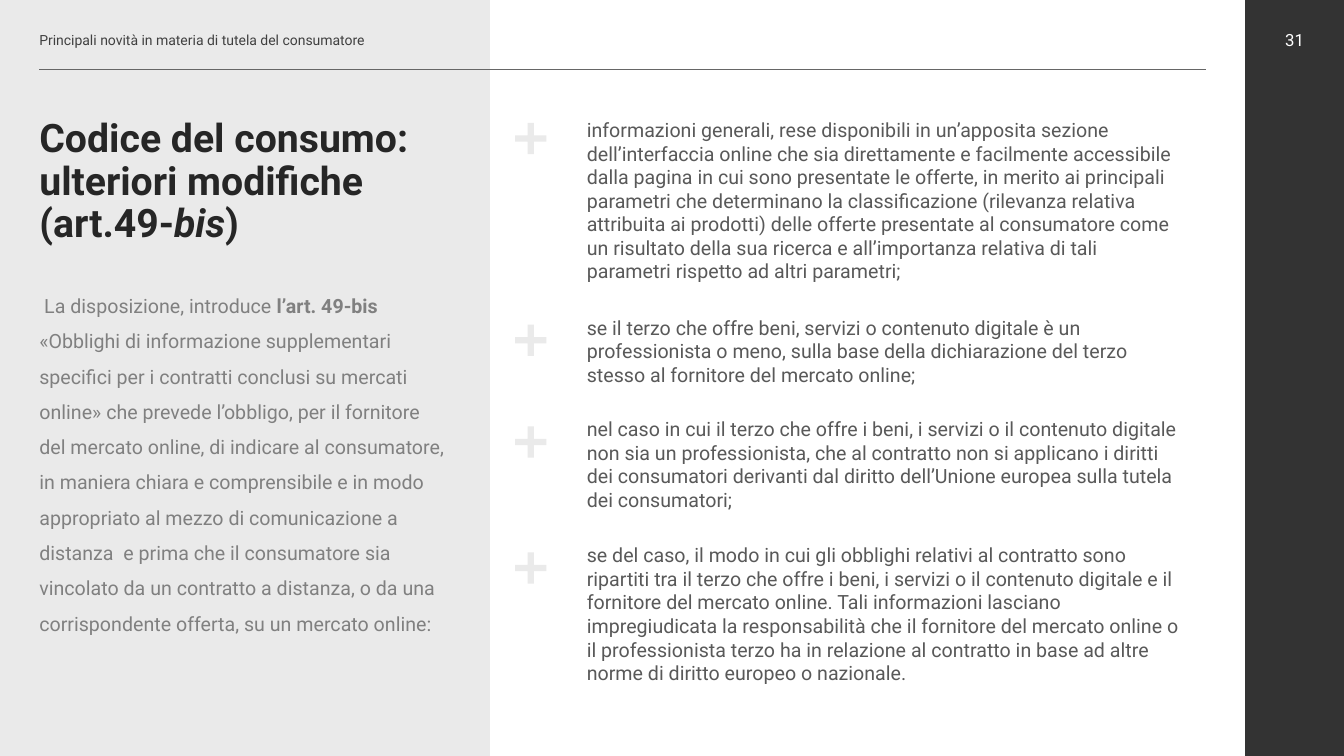
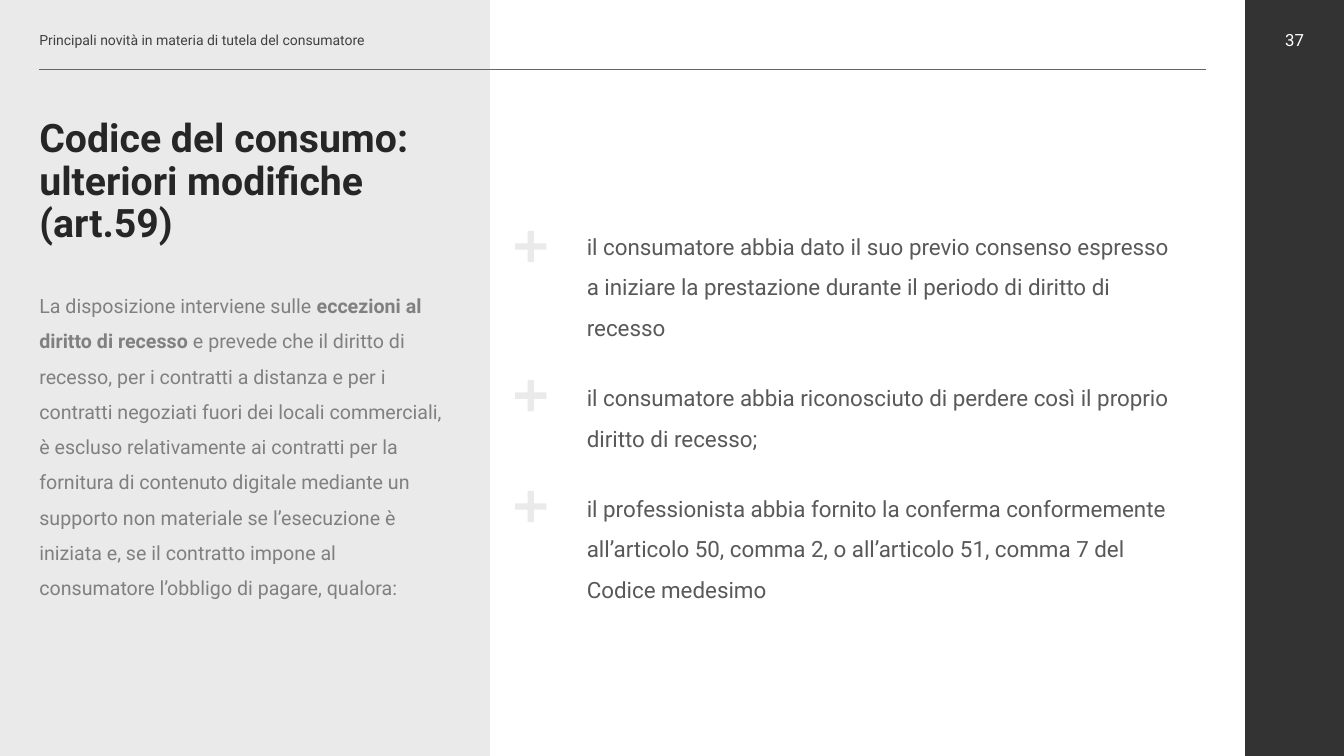
"""Build two slides on the changes to the Italian consumer code."""
from dataclasses import dataclass

from lxml import etree
from pptx import Presentation
from pptx import util as u
from pptx.dml.color import RGBColor
from pptx.enum import shapes, text
from pptx.oxml import ns

FONT = "Roboto"
COLORS = {
    "dark": "333333",
    "panel": "EAEAEA",
    "rule": "666666",
    "header": "404040",
    "title": "262626",
    "intro": "808080",
    "point": "595959",
    "white": "FFFFFF",
}
HEADER = "Principali novità in materia di tutela del consumatore"
MARGIN = 0.39
PANEL_WIDTH = 4.86
BAND_LEFT, BAND_WIDTH = 12.35, 0.98
SLIDE_WIDTH, SLIDE_HEIGHT = 13.33, 7.5
HEADER_TOP, HEADER_HEIGHT = 0.2, 0.39
MARK_LEFT, MARK_SIZE = 5.11, 0.31
POINT_LEFT, POINT_WIDTH = 5.43, 6.71


@dataclass(frozen=True)
class Span:
    text: str
    bold: bool = False
    italic: bool = False


@dataclass(frozen=True)
class Style:
    size: float
    color: str
    spacing: float = 1.0
    align: text.PP_ALIGN = text.PP_ALIGN.LEFT


@dataclass(frozen=True)
class Point:
    height: float
    text: str
    mark_offset: float = 0.09


@dataclass(frozen=True)
class Page:
    number: str
    title: list[Span]
    intro: list[Span]
    intro_height: float
    points: list[Point]
    points_top: float
    overlap: float
    point_style: Style


TITLE_STYLE = Style(28, "title", 0.9)
INTRO_STYLE = Style(14, "intro", 1.5)
HEADER_STYLE = Style(10, "header")
NUMBER_STYLE = Style(12, "white", align=text.PP_ALIGN.CENTER)

PAGES = [
    Page(
        number="31",
        title=[
            Span("Codice del consumo: ulteriori modifiche (art.49-", bold=True),
            Span("bis", bold=True, italic=True),
            Span(")", bold=True),
        ],
        intro=[
            Span(" La disposizione, introduce "),
            Span("l’art. 49-bis ", bold=True),
            Span(
                "«Obblighi di informazione supplementari specifici per i contratti "
                "conclusi su mercati online» che prevede l’obbligo, per il fornitore "
                "del mercato online, di indicare al consumatore, in maniera chiara e "
                "comprensibile e in modo appropriato al mezzo di comunicazione a "
                "distanza  e prima che il consumatore sia vincolato da un contratto a "
                "distanza, o da una corrispondente offerta, su un mercato online:"
            ),
        ],
        intro_height=3.53,
        points=[
            Point(
                2.05,
                "informazioni generali, rese disponibili in un’apposita sezione "
                "dell’interfaccia online che sia direttamente e facilmente accessibile "
                "dalla pagina in cui sono presentate le offerte, in merito ai "
                "principali parametri che determinano la classificazione (rilevanza "
                "relativa attribuita ai prodotti) delle offerte presentate al "
                "consumatore come un risultato della sua ricerca e all’importanza "
                "relativa di tali parametri rispetto ad altri parametri;",
                mark_offset=0.05,
            ),
            Point(
                1.1,
                "se il terzo che offre beni, servizi o contenuto digitale è un "
                "professionista o meno, sulla base della dichiarazione del terzo "
                "stesso al fornitore del mercato online;",
            ),
            Point(
                1.34,
                "nel caso in cui il terzo che offre i beni, i servizi o il contenuto "
                "digitale non sia un professionista, che al contratto non si applicano "
                "i diritti dei consumatori derivanti dal diritto dell’Unione europea "
                "sulla tutela dei consumatori;",
            ),
            Point(
                1.81,
                "se del caso, il modo in cui gli obblighi relativi al contratto sono "
                "ripartiti tra il terzo che offre i beni, i servizi o il contenuto "
                "digitale e il fornitore del mercato online. Tali informazioni lasciano "
                "impregiudicata la responsabilità che il fornitore del mercato online o "
                "il professionista terzo ha in relazione al contratto in base ad altre "
                "norme di diritto europeo o nazionale.",
            ),
        ],
        points_top=1.17,
        overlap=0.09,
        point_style=Style(14, "point"),
    ),
    Page(
        number="37",
        title=[Span("Codice del consumo: ulteriori modifiche (art.59)", bold=True)],
        intro=[
            Span("La disposizione interviene sulle "),
            Span("eccezioni al diritto di recesso ", bold=True),
            Span(
                "e prevede che il diritto di recesso, per i contratti a distanza e per "
                "i contratti negoziati fuori dei locali commerciali, è escluso "
                "relativamente ai contratti per la fornitura di contenuto digitale "
                "mediante un supporto non materiale se l’esecuzione è iniziata e, se il "
                "contratto impone al consumatore l’obbligo di pagare, qualora:"
            ),
        ],
        intro_height=3.13,
        points=[
            Point(
                1.61,
                "il consumatore abbia dato il suo previo consenso espresso a iniziare "
                "la prestazione durante il periodo di diritto di recesso",
                mark_offset=0.11,
            ),
            Point(
                1.21,
                "il consumatore abbia riconosciuto di perdere così il proprio diritto "
                "di recesso;",
            ),
            Point(
                1.61,
                "il professionista abbia fornito la conferma conformemente "
                "all’articolo 50, comma 2, o all’articolo 51, comma 7 del Codice "
                "medesimo",
            ),
        ],
        points_top=2.18,
        overlap=0.11,
        point_style=Style(16, "point", 1.5),
    ),
]


def rgb(color: str) -> RGBColor:
    return RGBColor.from_string(COLORS[color])


def box(left: float, top: float, width: float, height: float) -> list[u.Length]:
    return [u.Inches(value) for value in (left, top, width, height)]


def place(holder, left: float, top: float, width: float, height: float) -> None:
    holder.left, holder.top, holder.width, holder.height = box(left, top, width, height)


def add_solid(parent, kind: shapes.MSO_SHAPE, area: list[u.Length], color: str):
    solid = parent.add_shape(kind, *area)
    solid.shadow.inherit = False
    solid.fill.solid()
    solid.fill.fore_color.rgb = rgb(color)
    solid.line.fill.background()
    return solid


def write(holder, spans: list[Span], style: Style, insets=(0, 0, 0, 0),
          anchor=text.MSO_ANCHOR.TOP, grow: bool = False) -> None:
    frame = holder.text_frame
    frame.word_wrap = True
    frame.auto_size = (text.MSO_AUTO_SIZE.SHAPE_TO_FIT_TEXT if grow
                       else text.MSO_AUTO_SIZE.NONE)
    frame.vertical_anchor = anchor
    frame.margin_left, frame.margin_top, frame.margin_right, frame.margin_bottom = (
        u.Inches(inset) for inset in insets)
    paragraph = frame.paragraphs[0]
    properties = paragraph._p.get_or_add_pPr()
    properties.set("marL", "0")
    properties.set("indent", "0")
    etree.SubElement(properties, ns.qn("a:buNone"))
    paragraph.alignment = style.align
    paragraph.line_spacing = style.spacing
    paragraph.space_before = u.Pt(0)
    for span in spans:
        run = paragraph.add_run()
        run.text = span.text
        run.font.name = FONT
        run.font.size = u.Pt(style.size)
        run.font.bold = span.bold
        run.font.italic = span.italic
        run.font.color.rgb = rgb(style.color)


def move_frame_to_layout(slide, layout) -> None:
    for holder in list(layout.placeholders):
        if holder.placeholder_format.idx >= 10:
            holder.element.getparent().remove(holder.element)
    rectangle = shapes.MSO_SHAPE.RECTANGLE
    band = add_solid(slide.shapes, rectangle,
                     box(BAND_LEFT, 0, BAND_WIDTH, SLIDE_HEIGHT), "dark")
    panel = add_solid(slide.shapes, rectangle,
                      box(0, 0, PANEL_WIDTH, SLIDE_HEIGHT), "panel")
    rule = slide.shapes.add_connector(
        shapes.MSO_CONNECTOR.STRAIGHT, u.Inches(MARGIN), u.Inches(0.69),
        u.Inches(BAND_LEFT - MARGIN), u.Inches(0.69))
    rule.line.color.rgb = rgb("rule")
    rule.line.width = u.Pt(1)
    etree.SubElement(rule.element.spPr, ns.qn("a:effectLst"))
    for part in (band, panel, rule):
        layout.shapes.element.append(part.element)


def add_header(slide, number: str) -> None:
    header = slide.shapes.add_textbox(
        *box(MARGIN, HEADER_TOP, BAND_LEFT - 2 * MARGIN, HEADER_HEIGHT))
    write(header, [Span(HEADER)], HEADER_STYLE, anchor=text.MSO_ANCHOR.MIDDLE)
    page_number = add_solid(slide.shapes, shapes.MSO_SHAPE.RECTANGLE,
                            box(BAND_LEFT, HEADER_TOP, BAND_WIDTH, HEADER_HEIGHT), "dark")
    write(page_number, [Span(number)], NUMBER_STYLE, anchor=text.MSO_ANCHOR.MIDDLE)


def add_point(slide, point: Point, top: float, style: Style) -> None:
    group = slide.shapes.add_group_shape()
    mark = add_solid(group.shapes, shapes.MSO_SHAPE.CROSS,
                     box(MARK_LEFT, top + point.mark_offset, MARK_SIZE, MARK_SIZE), "panel")
    mark.adjustments[0] = 0.4
    statement = group.shapes.add_textbox(*box(POINT_LEFT, top, POINT_WIDTH, point.height))
    write(statement, [Span(point.text)], style, (MARGIN, 0, MARGIN, MARGIN), grow=True)


def fill_slide(slide, page: Page) -> None:
    title, intro = slide.shapes.title, slide.placeholders[1]
    column = PANEL_WIDTH - MARGIN
    place(title, MARGIN, 1.18, column, 1.27)
    write(title, page.title, TITLE_STYLE, (0, 0, MARGIN, 0), grow=True)
    place(intro, MARGIN, 2.8, column, page.intro_height)
    write(intro, page.intro, INTRO_STYLE, (0, 0, MARGIN, 0), grow=True)
    add_header(slide, page.number)
    top = page.points_top
    for point in page.points:
        add_point(slide, point, top, page.point_style)
        top += point.height - page.overlap


def main() -> None:
    deck = Presentation()
    deck.slide_width, deck.slide_height = u.Inches(SLIDE_WIDTH), u.Inches(SLIDE_HEIGHT)
    layout = deck.slide_layouts[1]
    slides = [deck.slides.add_slide(layout) for _ in PAGES]
    move_frame_to_layout(slides[0], layout)
    for slide, page in zip(slides, PAGES):
        fill_slide(slide, page)
    deck.save("out.pptx")


if __name__ == "__main__":
    main()
